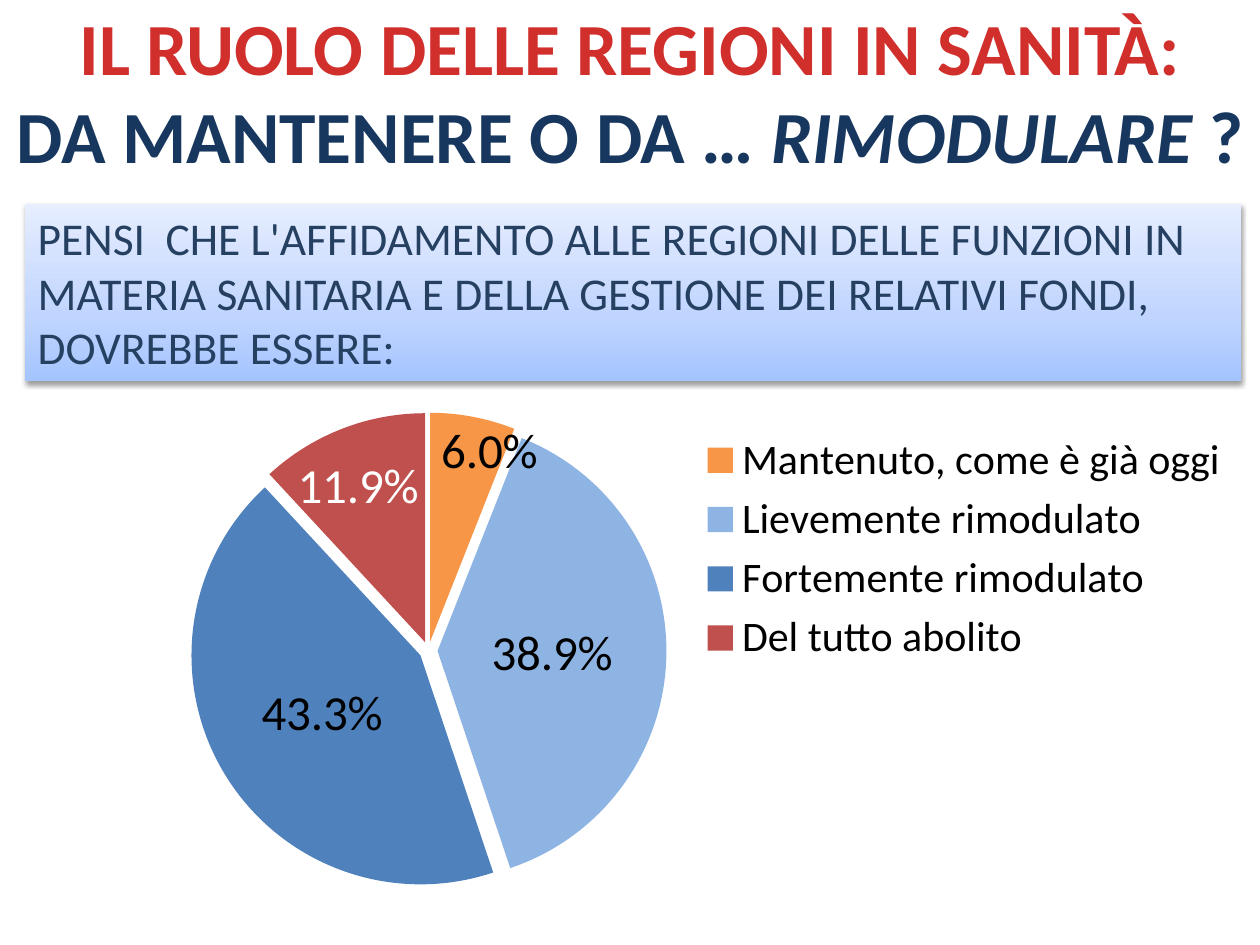
from typing import NamedTuple, Optional

from lxml import etree
from pptx import Presentation
from pptx.chart.data import CategoryChartData
from pptx.dml.color import RGBColor
from pptx.enum.chart import XL_CHART_TYPE, XL_LABEL_POSITION, XL_LEGEND_POSITION
from pptx.enum.shapes import MSO_SHAPE
from pptx.enum.text import MSO_ANCHOR, PP_ALIGN
from pptx.oxml import parse_xml
from pptx.util import Cm, Pt

PIE = XL_CHART_TYPE.PIE
MID = XL_LABEL_POSITION.CENTER
RIGHT = XL_LEGEND_POSITION.RIGHT
RECT = MSO_SHAPE.RECTANGLE
TOP = MSO_ANCHOR.TOP
LEFT, CENTER = PP_ALIGN.LEFT, PP_ALIGN.CENTER

BLACK = RGBColor(0x00, 0x00, 0x00)
WHITE = RGBColor(0xFF, 0xFF, 0xFF)
RED = RGBColor(0xD0, 0x2F, 0x2C)
NAVY = RGBColor(0x17, 0x37, 0x5E)
SLATE = RGBColor(0x25, 0x40, 0x61)
ORANGE = RGBColor(0xF7, 0x96, 0x46)
SKY = RGBColor(0x8E, 0xB4, 0xE3)
BLUE = RGBColor(0x4F, 0x81, 0xBD)
BRICK = RGBColor(0xC0, 0x50, 0x4D)

FACE = "Calibri"
C_NS = "http://schemas.openxmlformats.org/drawingml/2006/chart"
A_NS = "http://schemas.openxmlformats.org/drawingml/2006/main"


class Run(NamedTuple):
    text: str
    size: float
    color: RGBColor
    bold: bool = False
    italic: bool = False


class Slice(NamedTuple):
    name: str
    value: float
    color: RGBColor
    ink: RGBColor = BLACK
    shift: Optional[tuple] = None  # label offset, as parts of the chart


TITLE = [
    [Run("IL RUOLO DELLE REGIONI IN SANITÀ:", 42, RED, True)],
    [Run("DA MANTENERE O DA … ", 42, NAVY, True),
     Run("RIMODULARE", 42, NAVY, True, True),
     Run(" ?", 42, NAVY, True)],
]
QUERY = [[Run("PENSI  CHE L'AFFIDAMENTO ALLE REGIONI DELLE FUNZIONI IN MATERIA "
              "SANITARIA E DELLA GESTIONE DEI RELATIVI FONDI, DOVREBBE ESSERE:",
              26, SLATE)]]
SLICES = [
    Slice("Mantenuto, come è già oggi", 6, ORANGE, BLACK, (0.03, -0.11)),
    Slice("Lievemente rimodulato", 38.9, SKY),
    Slice("Fortemente rimodulato", 43.3, BLUE),
    Slice("Del tutto abolito", 11.9, BRICK, WHITE, (-0.02, -0.07)),
]
STOPS = [(0, "A4C4FF"), (35, "BFD4FF"), (100, "E6EEFF")]


def style(font, size: float, color: RGBColor, **extra) -> None:
    look = {"name": FACE, "size": Pt(size), **extra}
    for key, value in look.items():
        setattr(font, key, value)
    font.fill.solid()
    font.fill.fore_color.rgb = color


def write(frame, lines: list, align, space=None) -> None:
    frame.word_wrap = True
    frame.vertical_anchor = TOP
    for i, line in enumerate(lines):
        para = frame.paragraphs[0] if i == 0 else frame.add_paragraph()
        para.alignment = align
        para.line_spacing = space
        for part in line:
            run = para.add_run()
            run.text = part.text
            style(run.font, part.size, part.color,
                  bold=part.bold, italic=part.italic)


def shade(shape) -> None:
    """Three-stop gradient and a soft shadow below."""
    shape.line.fill.background()
    stops = "".join(f'<a:gs pos="{pos * 1000}"><a:srgbClr val="{rgb}"/></a:gs>'
                    for pos, rgb in STOPS)
    props = shape._element.spPr
    props.find(f"{{{A_NS}}}prstGeom").addnext(parse_xml(
        f'<a:gradFill xmlns:a="{A_NS}" rotWithShape="1"><a:gsLst>{stops}</a:gsLst>'
        '<a:lin ang="16200000" scaled="0"/></a:gradFill>'))
    props.append(parse_xml(
        f'<a:effectLst xmlns:a="{A_NS}"><a:outerShdw blurRad="40000" dist="20000" '
        'dir="5400000" rotWithShape="0"><a:srgbClr val="000000">'
        '<a:alpha val="38000"/></a:srgbClr></a:outerShdw></a:effectLst>'))


def layout(x: float, y: float, w: float = 0, h: float = 0, inner: bool = False):
    """Manual chart layout; without a size it is an offset."""
    root = etree.Element(f"{{{C_NS}}}layout")
    box = etree.SubElement(root, f"{{{C_NS}}}manualLayout")
    tags = [("layoutTarget", "inner")] if inner else []
    if w:
        tags += [("xMode", "edge"), ("yMode", "edge")]
    tags += [("x", x), ("y", y)]
    if w:
        tags += [("w", w), ("h", h)]
    for tag, value in tags:
        etree.SubElement(box, f"{{{C_NS}}}{tag}", val=str(value))
    return root


def place(node, new) -> None:
    """Swap in a layout as the right child of a plot area or legend."""
    for old in node.findall(f"{{{C_NS}}}layout"):
        node.remove(old)
    spot = node.find(f"{{{C_NS}}}legendPos")
    if spot is None:
        node.insert(0, new)
    else:
        spot.addnext(new)


def draw_pie(slide) -> None:
    data = CategoryChartData()
    data.categories = [s.name for s in SLICES]
    data.add_series("Series 1", [s.value for s in SLICES])
    chart = slide.shapes.add_chart(
        PIE, Cm(0), Cm(4.93), Cm(25.4), Cm(14.12), data).chart
    chart.has_title = False
    style(chart.font, 10, BLACK)

    # Legend and plot area
    chart.has_legend = True
    legend = chart.legend
    legend.position = RIGHT
    legend.include_in_layout = False
    style(legend.font, 24, BLACK)
    place(legend._element, layout(0.55, 0.26, 0.43, 0.35))
    area = chart._chartSpace.chart.plotArea
    place(area, layout(0, 0.24, 0.68, 0.68, True))

    # Labels
    plot = chart.plots[0]
    plot.vary_by_categories = True
    series = plot.series[0]
    labels = series.data_labels
    flags = {"show_percentage": True, "show_value": False, "position": MID,
             "number_format": "0.0%", "number_format_is_linked": False}
    for key, value in flags.items():
        setattr(labels, key, value)
    style(labels.font, 28, BLACK)

    # Slices
    for i, item in enumerate(SLICES):
        point = series.points[i]
        point.format.fill.solid()
        point.format.fill.fore_color.rgb = item.color
        if item.shift:
            label = point.data_label
            style(label.font, 28, item.ink)
            label.position = MID
            node = series._element.xpath(f".//c:dLbl[c:idx/@val='{i}']")[0]
            node.xpath("c:showVal")[0].set("val", "0")
            node.xpath("c:showPercent")[0].set("val", "1")
            shift = layout(*item.shift)
            node.xpath("c:idx")[0].addnext(shift)
            shift.addnext(etree.Element(
                f"{{{C_NS}}}numFmt", formatCode="0.0%", sourceLinked="0"))
    first = series._element.xpath("c:dPt")[0]
    first.addprevious(etree.Element(f"{{{C_NS}}}explosion", val="4"))


def main() -> None:
    deck = Presentation()
    deck.slide_width, deck.slide_height = Cm(25.4), Cm(19.05)
    slide = deck.slides.add_slide(deck.slide_layouts[6])

    # Question band
    band = slide.shapes.add_shape(RECT, Cm(0.51), Cm(4.11), Cm(24.51), Cm(3.58))
    shade(band)
    write(band.text_frame, QUERY, LEFT, Pt(31.2))

    draw_pie(slide)

    # Title
    title = slide.shapes.add_textbox(Cm(0), Cm(-0.08), Cm(25.4), Cm(3.84))
    write(title.text_frame, TITLE, CENTER)

    deck.save("out.pptx")


if __name__ == "__main__":
    main()
